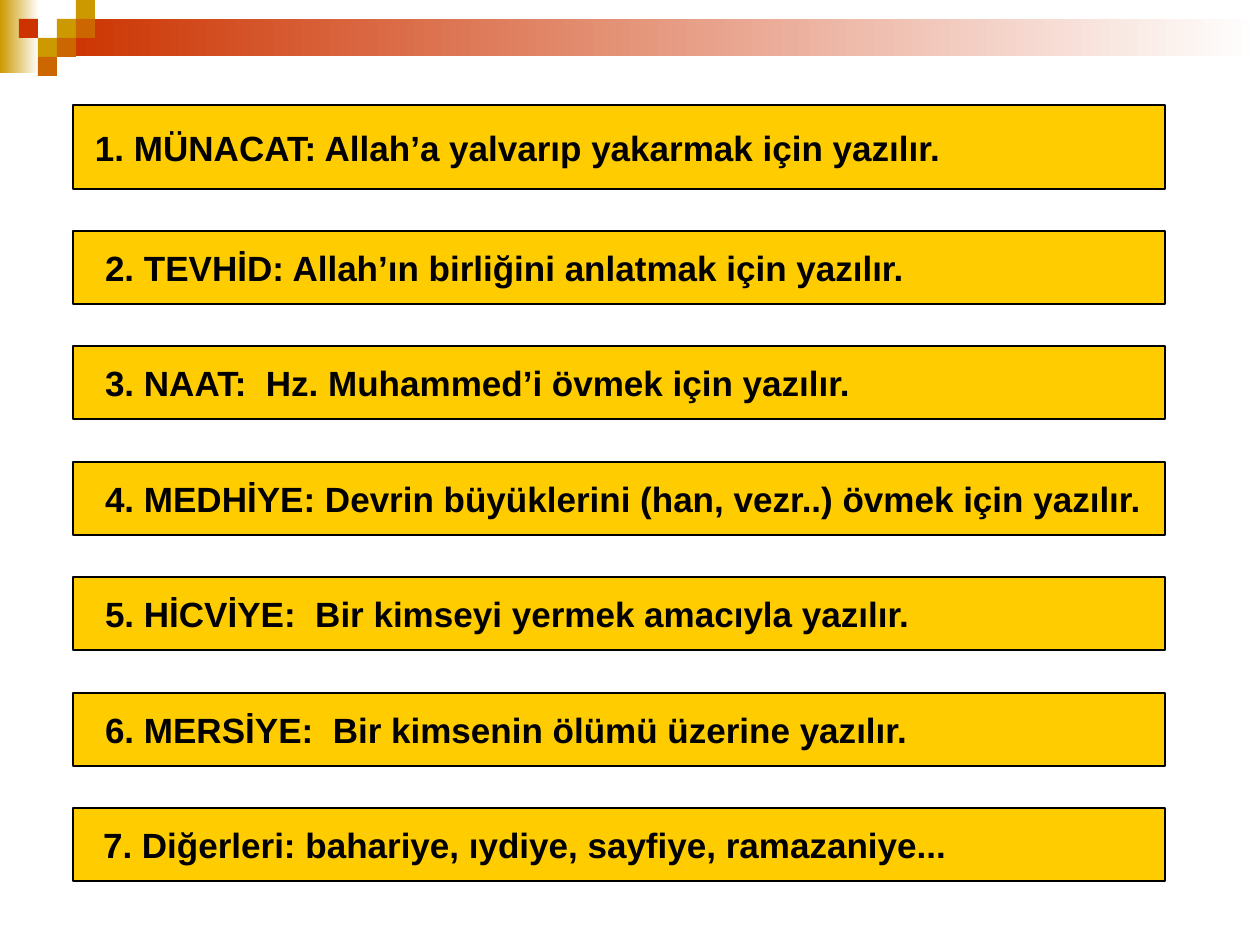
"""Build a slide listing seven poem kinds in gold bars under a tiled banner."""
from dataclasses import dataclass

from pptx import Presentation
from pptx.dml.color import RGBColor
from pptx.enum.shapes import MSO_SHAPE
from pptx.enum.text import MSO_ANCHOR, PP_ALIGN
from pptx.shapes.autoshape import Shape
from pptx.slide import Slide
from pptx.util import Emu, Pt

SCALE = 914400 / 126


@dataclass(frozen=True)
class Theme:
    font: str = "Arial"
    size: int = 20
    line: float = 0.75
    ink: str = "000000"
    paper: str = "FFFFFF"
    bar: str = "FFCC00"
    gold: str = "CC9900"
    amber: str = "CC6600"
    red: str = "CC3300"


@dataclass(frozen=True)
class Box:
    left: int
    top: int
    width: int
    height: int


@dataclass(frozen=True)
class Tile:
    col: int
    row: int
    color: str


@dataclass(frozen=True)
class Entry:
    text: str
    box: Box
    inset: int = 32


THEME = Theme()
UNIT = 19
TILES = [
    Tile(3, 1, THEME.gold),
    Tile(4, 0, THEME.gold),
    Tile(4, 1, THEME.amber),
    Tile(2, 2, THEME.gold),
    Tile(1, 1, THEME.red),
    Tile(3, 2, THEME.amber),
    Tile(2, 3, THEME.amber),
]


def px(count: int) -> Emu:
    return Emu(round(count * SCALE))


def row(index: int) -> Box:
    return Box(73, 231 + index * 231 // 2, 1092, 73)


ENTRIES = [
    Entry("1. MÜNACAT: Allah’a yalvarıp yakarmak için yazılır.", Box(73, 105, 1092, 84), 22),
    Entry("2. TEVHİD: Allah’ın birliğini anlatmak için yazılır.", row(0)),
    Entry("3. NAAT:  Hz. Muhammed’i övmek için yazılır.", row(1)),
    Entry("4. MEDHİYE: Devrin büyüklerini (han, vezr..) övmek için yazılır.", row(2)),
    Entry("5. HİCVİYE:  Bir kimseyi yermek amacıyla yazılır.", row(3)),
    Entry("6. MERSİYE:  Bir kimsenin ölümü üzerine yazılır.", row(4)),
    Entry("7. Diğerleri: bahariye, ıydiye, sayfiye, ramazaniye...", row(5), 30),
]


def block(slide: Slide, box: Box) -> Shape:
    shape = slide.shapes.add_shape(
        MSO_SHAPE.RECTANGLE, px(box.left), px(box.top), px(box.width), px(box.height)
    )
    shape.shadow.inherit = False
    shape.line.fill.background()
    return shape


def paint(shape: Shape, color: str) -> None:
    shape.fill.solid()
    shape.fill.fore_color.rgb = RGBColor.from_string(color)


def fade(slide: Slide, box: Box, color: str) -> None:
    fill = block(slide, box).fill
    fill.gradient()
    fill.gradient_angle = 0
    for stop, tone in zip(fill.gradient_stops, (color, THEME.paper)):
        stop.color.rgb = RGBColor.from_string(tone)


def banner(slide: Slide) -> None:
    fade(slide, Box(0, 0, 39, 73), THEME.gold)
    fade(slide, Box(57, 19, 1203, 37), THEME.red)
    for tile in TILES:
        box = Box(tile.col * UNIT, tile.row * UNIT, UNIT, UNIT)
        paint(block(slide, box), tile.color)


def bar(slide: Slide, entry: Entry) -> None:
    shape = block(slide, entry.box)
    paint(shape, THEME.bar)
    shape.line.color.rgb = RGBColor.from_string(THEME.ink)
    shape.line.width = Pt(THEME.line)
    frame = shape.text_frame
    frame.word_wrap = True
    frame.vertical_anchor = MSO_ANCHOR.MIDDLE
    frame.margin_left = px(entry.inset)
    frame.margin_right = 0
    para = frame.paragraphs[0]
    para.text = entry.text
    para.alignment = PP_ALIGN.LEFT
    para.font.name = THEME.font
    para.font.size = Pt(THEME.size)
    para.font.bold = True
    para.font.color.rgb = RGBColor.from_string(THEME.ink)


def main() -> None:
    deck = Presentation()
    deck.slide_width, deck.slide_height = px(1260), px(945)
    slide = deck.slides.add_slide(deck.slide_layouts[6])
    banner(slide)
    for entry in ENTRIES:
        bar(slide, entry)
    deck.save("out.pptx")


if __name__ == "__main__":
    main()
